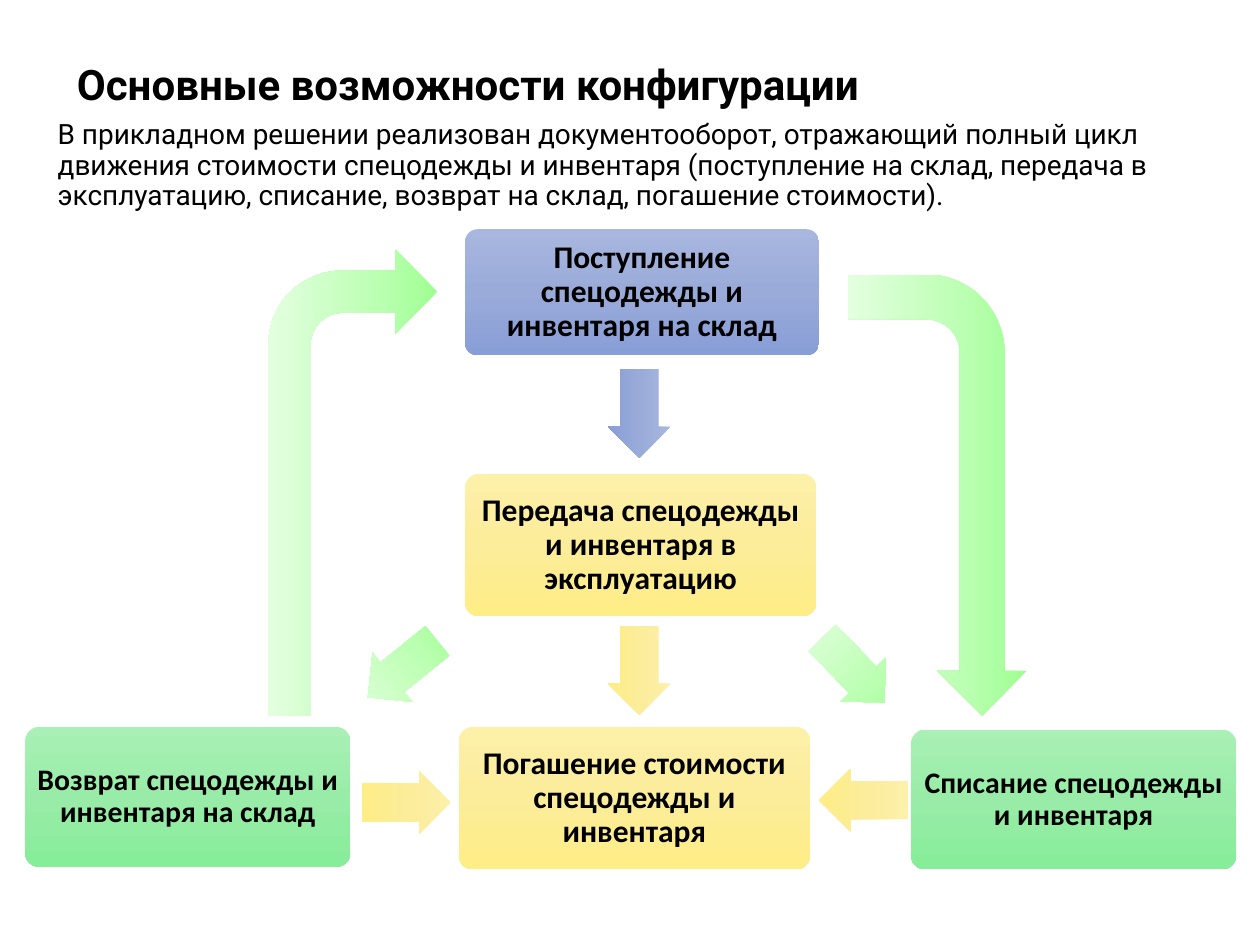
from lxml import etree
from pptx import Presentation
from pptx.enum import shapes, text
from pptx.dml.color import RGBColor
from pptx.oxml import ns
from pptx.util import Pt

BLACK = RGBColor.from_string("000000")
# Gradient stops: position in percent and colour
COLORS = {
    "blue": {0: "A8B7DF", 50: "9AABD9", 100: "889ED7"},
    "yellow": {0: "FDF0A9", 50: "FBED9A", 100: "FFED86"},
    "green": {0: "A8F0B5", 50: "99ECA8", 100: "86ED99"},
    "lime": {0: "9EFF91", 35: "BBFFB2", 100: "E3FFDF"},
}

deck = Presentation()
deck.slide_width, deck.slide_height = Pt(720), Pt(540)
page = deck.slides.add_slide(deck.slide_layouts[5])


def add_gradient_shape(kind, frame, color, angle):
    """Add a borderless shape with a linear gradient, angle clockwise."""
    shape = page.shapes.add_shape(kind, *map(Pt, frame))
    shape.shadow.inherit = False
    shape.line.fill.background()
    shape.fill.gradient()
    grad = shape._element.spPr.find(ns.qn("a:gradFill"))
    grad.set("rotWithShape", "1")
    stops = grad.find(ns.qn("a:gsLst"))
    for stop in list(stops):
        stops.remove(stop)
    for position, value in COLORS[color].items():
        stop = etree.SubElement(stops, ns.qn("a:gs"), pos=str(position * 1000))
        etree.SubElement(stop, ns.qn("a:srgbClr"), val=value)
    grad.find(ns.qn("a:lin")).set("ang", str(angle * 60000))
    return shape


def write(box, words, font, size, bold, align, anchor):
    frame = box.text_frame
    frame.word_wrap = True
    frame.auto_size = text.MSO_AUTO_SIZE.NONE
    frame.vertical_anchor = anchor
    para = frame.paragraphs[0]
    para.text = words
    para.alignment = align
    para.line_spacing = 0.9
    para.font.name, para.font.size, para.font.bold = font, Pt(size), bold
    para.font.color.rgb = BLACK


# Title and introduction
title = page.shapes.title
title.left, title.top, title.width, title.height = map(Pt, (36.7, 33.1, 649.4, 45.4))
write(title, "Основные возможности конфигурации", "Roboto", 24, True,
      text.PP_ALIGN.LEFT, text.MSO_ANCHOR.TOP)
intro = page.shapes.add_textbox(*map(Pt, (25.9, 65.5, 686.9, 65.5)))
write(intro, "В прикладном решении реализован документооборот, отражающий полный цикл "
      "движения стоимости спецодежды и инвентаря (поступление на склад, передача в "
      "эксплуатацию, списание, возврат на склад, погашение стоимости).",
      "Roboto", 16, False, text.PP_ALIGN.LEFT, text.MSO_ANCHOR.TOP)

# Stages of the cycle
stages = [
    ("Поступление спецодежды и инвентаря на склад", (265.7, 131, 202.3, 72), "blue", 18),
    ("Передача спецодежды и инвентаря в эксплуатацию", (265.7, 270.7, 200.9, 81.4), "yellow", 18),
    ("Возврат спецодежды и инвентаря на склад", (14.4, 415.4, 185.8, 79.9), "green", 17),
    ("Погашение стоимости спецодежды и инвентаря", (262.1, 415.4, 200.9, 81.4), "yellow", 18),
    ("Списание спецодежды и инвентаря", (520.6, 416.9, 185.8, 79.9), "green", 17),
]
for words, frame, color, size in stages:
    box = add_gradient_shape(shapes.MSO_SHAPE.ROUNDED_RECTANGLE, frame, color, 90)
    box.adjustments[0] = 0.1
    box.text_frame.margin_left = box.text_frame.margin_right = Pt(4)
    write(box, words, "Calibri", size, True, text.PP_ALIGN.CENTER, text.MSO_ANCHOR.MIDDLE)

# Short arrows: left, top, rotation, colour, gradient angle
short_arrows = [
    (339.8, 218.2, 90, "blue", 90),
    (339.8, 365, 90, "yellow", 90),
    (204.5, 364.3, 141, "lime", 0),
    (462.2, 365, 45.8, "lime", 180),
    (206.6, 440.6, 0, "yellow", 180),
    (468, 439.2, 180, "yellow", 0),
]
for left, top, rotation, color, angle in short_arrows:
    arrow = add_gradient_shape(shapes.MSO_SHAPE.RIGHT_ARROW, (left, top, 51.1, 36), color, angle)
    arrow.adjustments[0], arrow.adjustments[1] = 0.6, 0.5
    arrow.rotation = rotation

# Long bent arrows: back to the warehouse and straight to write-off
add_gradient_shape(shapes.MSO_SHAPE.BENT_ARROW, (153.4, 142.6, 96.5, 266.4), "lime", 180)
write_off = add_gradient_shape(shapes.MSO_SHAPE.BENT_ARROW, (409.7, 231.8, 252, 102.2), "lime", 90)
write_off.rotation = 90

deck.save("out.pptx")
